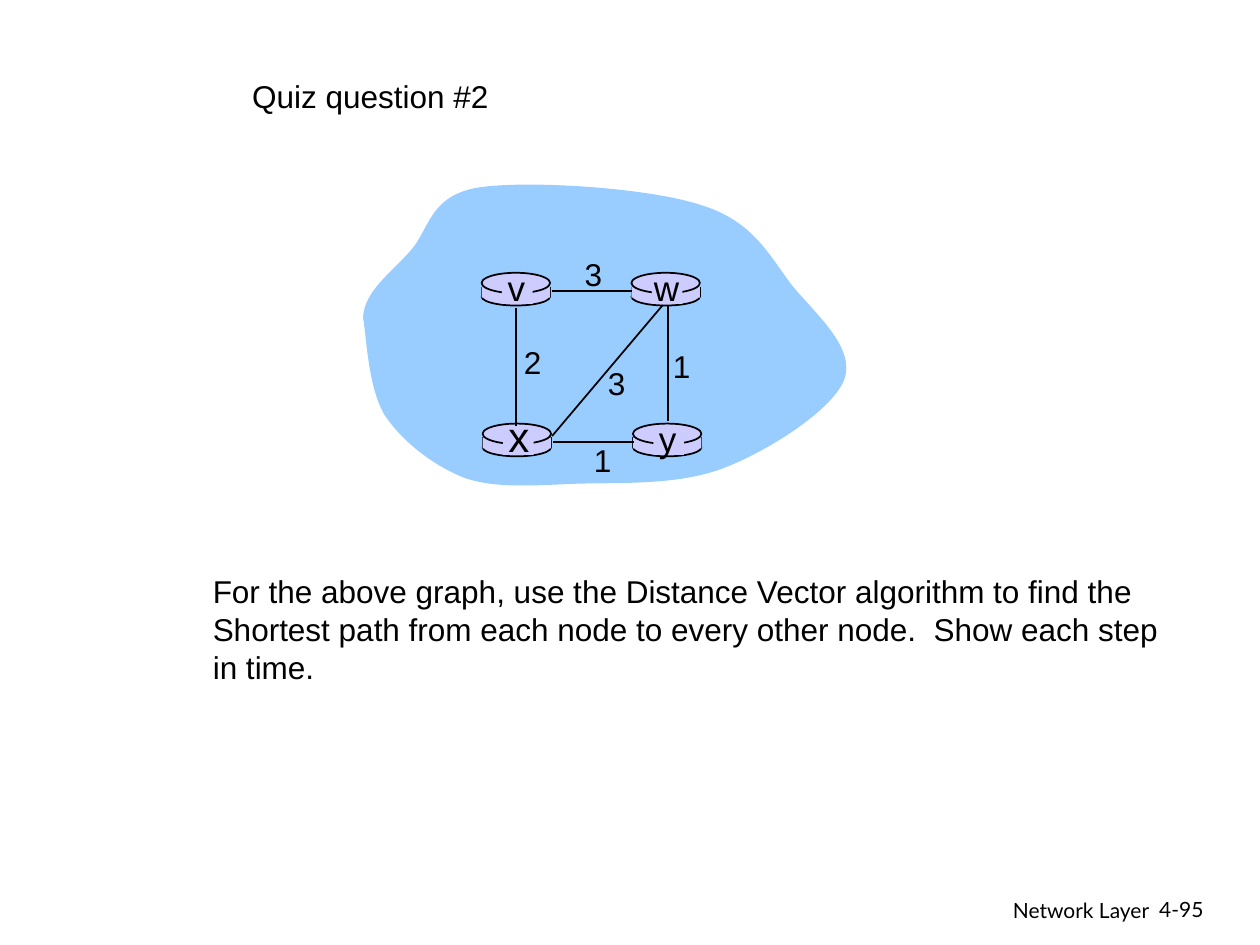
from lxml import etree
from pptx import Presentation
from pptx.dml.color import RGBColor
from pptx.enum import shapes, text
from pptx.oxml import ns
from pptx.util import Cm, Pt

BLACK = RGBColor(0x00, 0x00, 0x00)
CLOUD_BLUE = RGBColor(0x99, 0xCC, 0xFF)
ROUTER_LILAC = RGBColor(0xCC, 0xCC, 0xFF)
LEFT, CENTER, RIGHT = text.PP_ALIGN.LEFT, text.PP_ALIGN.CENTER, text.PP_ALIGN.RIGHT
OVAL, RECT = shapes.MSO_SHAPE.OVAL, shapes.MSO_SHAPE.RECTANGLE

# Content; every length is in centimetres
TITLE = "Quiz question #2"
QUESTION = [
    "For the above graph, use the Distance Vector algorithm to find the",
    "Shortest path from each node to every other node.  Show each step",
    "in time.",
]
FOOTER = [  # text, area, alignment
    ("Network Layer", (15.37, 17.96, 8.05, 0.79), RIGHT),
    ("4-95", (23.12, 17.95, 1.88, 0.76), LEFT),
]
ROUTERS = [  # name, left, top, letter size, letter centre
    ("x", 9.73, 8.54, 24, (10.46, 8.79)),
    ("v", 9.71, 5.5, 20, (10.41, 5.8)),
    ("w", 12.73, 5.5, 20, (13.44, 5.8)),
    ("y", 12.76, 8.54, 20, (13.46, 8.85)),
]
LINKS = [  # start, end, cost, centre of the cost
    ((13.46, 6.17), (13.46, 8.48), "1", (13.74, 7.39)),
    ((10.4, 6.2), (10.4, 8.58), "2", (10.74, 7.31)),
    ((11.13, 8.79), (13.36, 6.15), "3", (12.43, 7.72)),
    ((12.78, 8.91), (11.15, 8.91), "1", (12.15, 9.27)),
    ((12.75, 5.87), (11.13, 5.87), "3", (11.96, 5.53)),
]
CLOUD_START = (7.32, 6.4)
CLOUD_CURVES = [  # two control points and an end point each
    ((7.34, 5.87), (7.9, 5.49), (8.28, 5.05)),
    ((8.66, 4.62), (8.66, 3.94), (9.65, 3.78)),
    ((10.62, 3.63), (13.08, 3.78), (14.15, 4.14)),
    ((15.21, 4.47), (15.52, 5.18), (15.98, 5.77)),
    ((16.46, 6.35), (17.25, 7.01), (17.02, 7.65)),
    ((16.79, 8.26), (15.52, 9.07), (14.63, 9.42)),
    ((13.74, 9.78), (12.57, 9.73), (11.68, 9.75)),
    ((10.82, 9.78), (10.01, 9.86), (9.35, 9.63)),
    ((8.71, 9.37), (8.1, 8.89), (7.75, 8.36)),
    ((7.42, 7.8), (7.39, 6.81), CLOUD_START),
]
ROUTER_WIDTH = 1.38


def lengths(values):
    return [Cm(value) for value in values]


def write(box, lines, size, font="Arial", align=LEFT, wrap=False):
    frame = box.text_frame
    frame.text = "\n".join(lines)
    layout = {
        "word_wrap": wrap,
        "auto_size": text.MSO_AUTO_SIZE.NONE,
        "vertical_anchor": text.MSO_ANCHOR.TOP,
    }
    for name, value in layout.items():
        setattr(frame, name, value)
    for para in frame.paragraphs:
        para.alignment = align
        para.font.color.rgb = BLACK
        for name, value in {"size": Pt(size), "name": font}.items():
            setattr(para.font, name, value)


def add_text(page, area, *args, **options):
    write(page.shapes.add_textbox(*lengths(area)), *args, **options)


def add_letter(page, letter, centre, size):
    width, height = 0.86, size * 0.04 + 0.3
    area = (centre[0] - width / 2, centre[1] - height / 2, width, height)
    add_text(page, area, [letter], size, align=CENTER)


def paint(shape, color, outlined=False):
    shape.shadow.inherit = False
    shape.fill.solid()
    shape.fill.fore_color.rgb = color
    if outlined:
        shape.line.color.rgb = BLACK
        shape.line.width = Pt(1)
    else:
        shape.line.fill.background()


def add_block(page, kind, area, outlined=False):
    paint(page.shapes.add_shape(kind, *lengths(area)), ROUTER_LILAC, outlined)


def add_line(page, start, end):
    line = page.shapes.add_connector(
        shapes.MSO_CONNECTOR.STRAIGHT, *lengths(start + end))
    line.line.color.rgb = BLACK
    line.line.width = Pt(1)
    etree.SubElement(line._element.spPr, ns.qn("a:effectLst"))


def add_router(page, left, top):
    add_block(page, OVAL, (left, top + 0.3, ROUTER_WIDTH, 0.36), outlined=True)
    for side in (left, left + ROUTER_WIDTH):
        add_line(page, (side, top + 0.28), (side, top + 0.48))
    add_block(page, RECT, (left, top + 0.28, ROUTER_WIDTH, 0.22))
    add_block(page, OVAL, (left, top, ROUTER_WIDTH, 0.41), outlined=True)


def add_cloud(page):
    builder = page.shapes.build_freeform(*lengths(CLOUD_START))
    points = [lengths(point) for curve in CLOUD_CURVES for point in curve]
    builder.add_line_segments(points, close=True)
    cloud = builder.convert_to_shape()
    paint(cloud, CLOUD_BLUE)
    # Turn every three straight segments into one cubic curve
    segments = list(cloud._element.iter(ns.qn("a:lnTo")))
    for index in range(0, len(segments), 3):
        curve, *others = segments[index:index + 3]
        curve.tag = ns.qn("a:cubicBezTo")
        for other in others:
            curve.append(other[0])
            other.getparent().remove(other)


def main():
    deck = Presentation()
    deck.slide_width, deck.slide_height = Cm(25.4), Cm(19.05)
    page = deck.slides.add_slide(deck.slide_layouts[5])

    # Title and footer
    title = page.shapes.title
    title.left, title.top, title.width, title.height = lengths((4.83, 1.43, 5.33, 1.02))
    write(title, [TITLE], 18)
    for words, area, align in FOOTER:
        add_text(page, area, [words], 12, font="Lato", align=align, wrap=True)

    # Network: cloud, routers, links, then names and costs on top
    add_cloud(page)
    for _, left, top, _, _ in ROUTERS:
        add_router(page, left, top)
    for start, end, _, _ in LINKS:
        add_line(page, start, end)
    for name, left, top, size, centre in ROUTERS:
        add_block(page, RECT, (left + 0.41, top + 0.05, 0.62, 0.58))
        add_letter(page, name, centre, size)
    for _, _, cost, centre in LINKS:
        add_letter(page, cost, centre, 18)

    # Question
    add_text(page, (4.04, 11.41, 19.76, 2.57), QUESTION, 18)
    deck.save("out.pptx")


if __name__ == "__main__":
    main()
